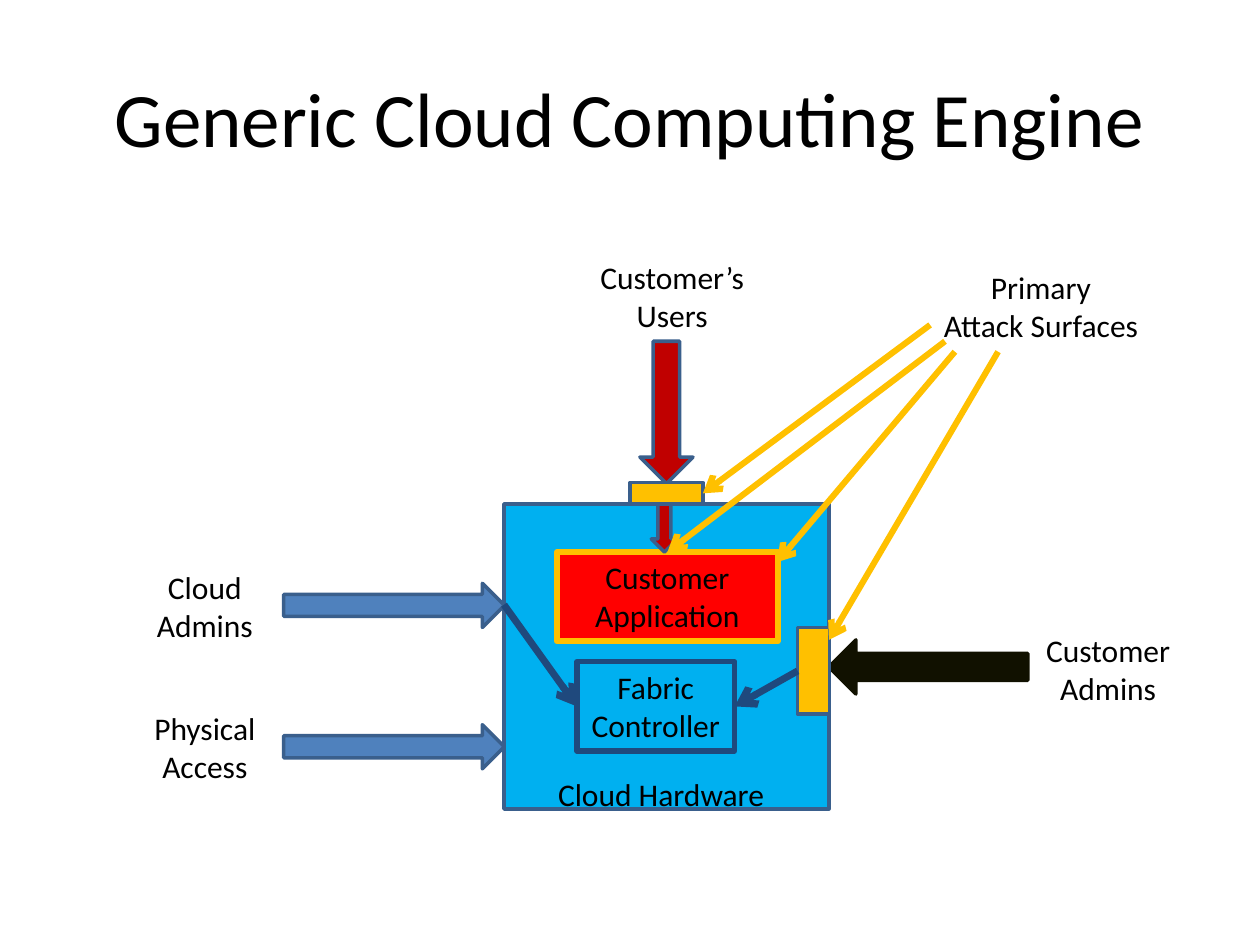
from lxml.etree import SubElement
from pptx import Presentation
from pptx.dml.color import RGBColor
from pptx.enum.shapes import MSO_CONNECTOR, MSO_SHAPE
from pptx.enum.text import MSO_ANCHOR, PP_ALIGN
from pptx.oxml.ns import qn
from pptx.util import Cm, Pt

COLORS = {
    "text": "000000", "hardware": "00B0F0", "outline": "3A5F8C",
    "app": "FF0000", "surface": "FFC000", "provider": "4F81BD",
    "users": "C00000", "admins": "111100", "control": "1F497D",
}


def write_text(sp, text, size=18, align=PP_ALIGN.CENTER, anchor=MSO_ANCHOR.TOP, wrap=True):
    tf = sp.text_frame
    tf.word_wrap = wrap
    tf.vertical_anchor = anchor
    for i, line in enumerate(text.split("\n")):
        p = tf.paragraphs[0] if i == 0 else tf.add_paragraph()
        p.alignment = align
        r = p.add_run()
        r.text = line
        r.font.name = "Calibri"
        r.font.size = Pt(size)
        r.font.color.rgb = RGBColor.from_string(COLORS["text"])


def add_block(kind, box, fill=None, line="outline", width=2):
    sp = s.shapes.add_shape(kind, *map(Cm, box))
    sp.shadow.inherit = False
    if fill:
        sp.fill.solid()
        sp.fill.fore_color.rgb = RGBColor.from_string(COLORS[fill])
    else:
        sp.fill.background()
    sp.line.color.rgb = RGBColor.from_string(COLORS[line])
    sp.line.width = Pt(width)
    return sp


prs = Presentation()
prs.slide_width, prs.slide_height = Cm(25.4), Cm(19.05)
s = prs.slides.add_slide(prs.slide_layouts[6])

# Cloud hardware, behind everything else
add_block(MSO_SHAPE.RECTANGLE, (10.16, 10.16, 6.55, 6.15), "hardware")

# Title and labels
labels = [
    ("Generic Cloud Computing Engine", (1.27, 0.76, 22.86, 3.18),
     {"size": 44, "anchor": MSO_ANCHOR.MIDDLE}),
    ("Cloud Hardware", (11, 15.49, 4.88, 1.02), {"align": PP_ALIGN.LEFT}),
    ("Cloud Admins", (2.54, 11.33, 3.18, 1.8), {}),
    ("Physical Access", (2.54, 14.17, 3.18, 1.8), {}),
    ("Customer Admins", (20.75, 12.6, 3.18, 1.8), {}),
    ("Customer’s Users", (11.43, 5.08, 4.24, 1.8), {}),
    ("Primary\nAttack Surfaces", (18.75, 5.28, 4.47, 1.8), {"wrap": False}),
]
for text, box, style in labels:
    write_text(s.shapes.add_textbox(*map(Cm, box)), text, **style)

# Software inside the hardware
app = add_block(MSO_SHAPE.RECTANGLE, (11.23, 11.13, 4.45, 1.8), "app", "surface", 3.5)
write_text(app, "Customer Application")
fabric = add_block(MSO_SHAPE.RECTANGLE, (11.63, 13.34, 3.18, 1.8), None, "control", 3)
write_text(fabric, "Fabric Controller")

# Block arrows for each kind of access
for top in (11.76, 14.61):
    add_block(MSO_SHAPE.RIGHT_ARROW, (5.72, top, 4.45, 0.89), "provider")
add_block(MSO_SHAPE.LEFT_ARROW, (16.71, 12.9, 4.01, 1.09), "admins", "admins")
for box in ((12.9, 6.88, 1.07, 2.87), (13.13, 10.16, 0.53, 0.97)):
    add_block(MSO_SHAPE.DOWN_ARROW, box, "users")

# Gates on the hardware's edge
admin_gate = add_block(MSO_SHAPE.RECTANGLE, (16.08, 12.65, 0.64, 1.75), "surface")
user_gate = add_block(MSO_SHAPE.RECTANGLE, (12.7, 9.73, 1.47, 0.43), "surface")

# Thin arrows: an end is either a point or a (shape, side) joint
TOP, LEFT, RIGHT = 0, 1, 3
arrows = [
    ((10.16, 12.19), (fabric, LEFT), "control", 4),
    ((admin_gate, LEFT), (fabric, RIGHT), "control", 4),
    ((20.12, 7.09), (16.71, 12.9), "surface", 3.5),
    ((19.25, 7.09), (15.67, 11.33), "surface", 3.5),
    ((18.75, 6.55), (user_gate, RIGHT), "surface", 3.5),
    ((19.05, 6.88), (app, TOP), "surface", 3.5),
]
for start, end, color, width in arrows:
    cn = s.shapes.add_connector(MSO_CONNECTOR.STRAIGHT, 0, 0, 0, 0)
    if start[0] is admin_gate:
        cn.begin_connect(*start)
    else:
        cn.begin_x, cn.begin_y = map(Cm, start)
    if end[0] in (fabric, user_gate, app):
        cn.end_connect(*end)
    else:
        cn.end_x, cn.end_y = map(Cm, end)
    cn.line.color.rgb = RGBColor.from_string(COLORS[color])
    cn.line.width = Pt(width)
    SubElement(cn.line._get_or_add_ln(), qn("a:tailEnd"), type="arrow")
    SubElement(cn._element.spPr, qn("a:effectLst"))

prs.save("out.pptx")
